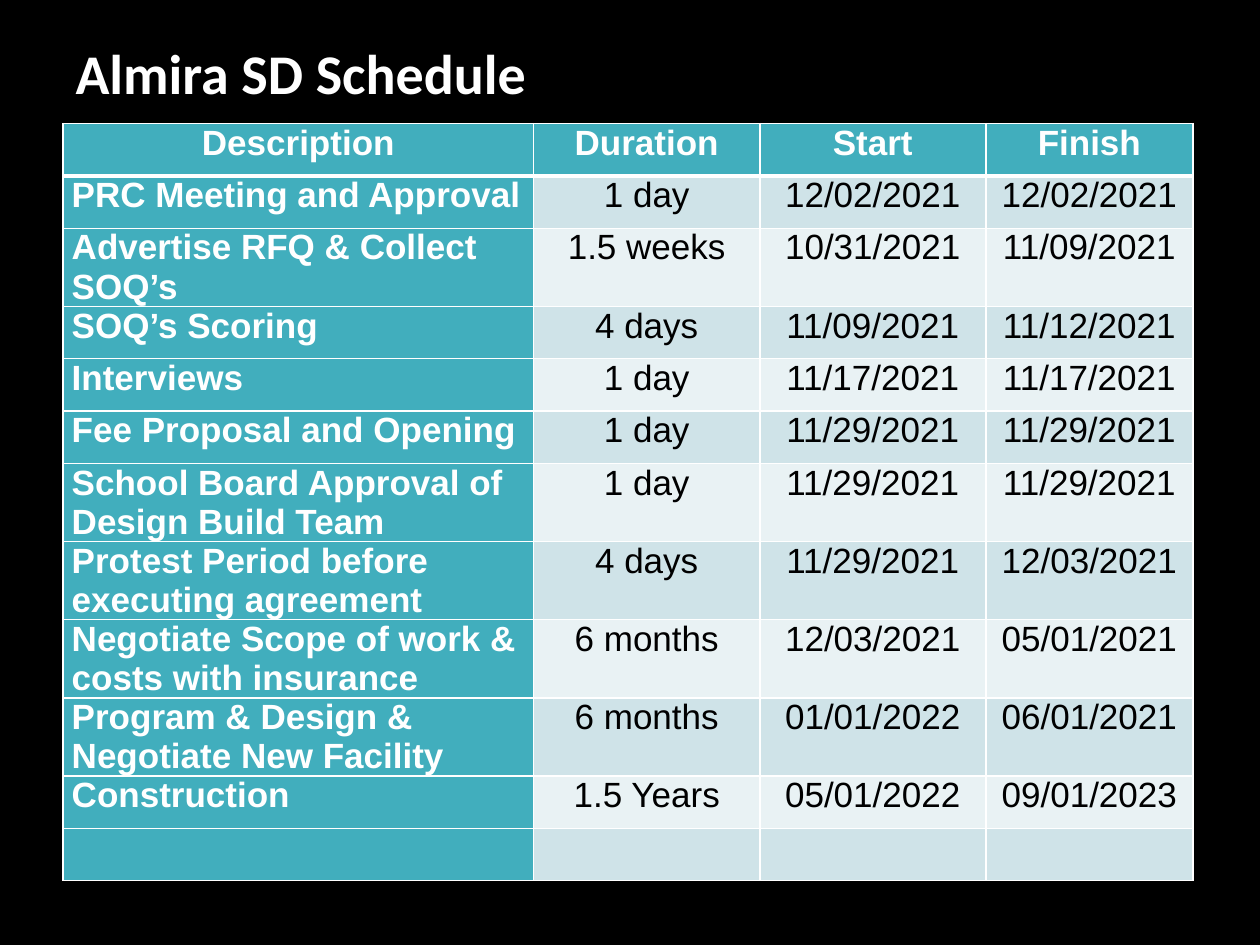
import pptx
import pptx.dml.color
import pptx.enum.text
import pptx.oxml
import pptx.oxml.ns
import pptx.util

Pt = pptx.util.Pt
ALIGN = pptx.enum.text.PP_ALIGN
ANCHOR = pptx.enum.text.MSO_ANCHOR

WHITE, BLACK, TEAL = "FFFFFF", "000000", "41AEBD"
BANDS = ["CFE3E8", "E9F2F4"]
COLUMN_WIDTHS = [269, 129.2, 129.2, 118.4]
SINGLE, DOUBLE = 29.9, 44.7
SCHEDULE = [
    (SINGLE, "Description", "Duration", "Start", "Finish"),
    (SINGLE, "PRC Meeting and Approval", "1 day", "12/02/2021", "12/02/2021"),
    (DOUBLE, "Advertise RFQ & Collect SOQ’s", "1.5 weeks", "10/31/2021", "11/09/2021"),
    (SINGLE, "SOQ’s Scoring", "4 days", "11/09/2021", "11/12/2021"),
    (SINGLE, "Interviews", "1 day", "11/17/2021", "11/17/2021"),
    (SINGLE, "Fee Proposal and Opening", "1 day", "11/29/2021", "11/29/2021"),
    (DOUBLE, "School Board Approval of Design Build Team", "1 day", "11/29/2021", "11/29/2021"),
    (DOUBLE, "Protest Period before executing agreement", "4 days", "11/29/2021", "12/03/2021"),
    (DOUBLE, "Negotiate Scope of work & costs with insurance", "6 months", "12/03/2021", "05/01/2021"),
    (DOUBLE, "Program & Design & Negotiate New Facility", "6 months", "01/01/2022", "06/01/2021"),
    (SINGLE, "Construction", "1.5 Years", "05/01/2022", "09/01/2023"),
    (SINGLE, "", "", "", ""),
]


def set_fill(fill, color):
    fill.solid()
    fill.fore_color.rgb = pptx.dml.color.RGBColor.from_string(color)


def set_font(font, color, **values):
    for name, value in values.items():
        setattr(font, name, value)
    set_fill(font.fill, color)


def set_borders(cell, color, **widths):
    """Give each named side (L, R, T, B) a solid line; call before filling the cell."""
    tc_pr = cell._tc.get_or_add_tcPr()
    for side, width in widths.items():
        tc_pr.append(pptx.oxml.parse_xml(
            f'<a:ln{side} {pptx.oxml.ns.nsdecls("a")} w="{Pt(width)}"><a:solidFill>'
            f'<a:srgbClr val="{color}"/></a:solidFill></a:ln{side}>'))


def add_title(s, text, left, top, width, height):
    sp = s.shapes.title
    sp.left, sp.top, sp.width, sp.height = map(Pt, (left, top, width, height))
    tf = sp.text_frame
    tf.text = text
    tf.vertical_anchor = ANCHOR.MIDDLE
    p = tf.paragraphs[0]
    p.alignment = ALIGN.LEFT
    p.line_spacing = 0.9
    set_font(p.runs[0].font, WHITE, name="Calibri", size=Pt(32), bold=True)


def format_cell(cell, text, row, col):
    header = row == 0
    heading = header or col == 0
    set_borders(cell, WHITE, L=1, R=1, T=3 if row == 1 else 1, B=3 if header else 1)
    set_fill(cell.fill, TEAL if heading else BANDS[(row - 1) % 2])
    cell.margin_left = cell.margin_right = Pt(5)
    cell.margin_top = cell.margin_bottom = 0
    if text:
        cell.text = text
        p = cell.text_frame.paragraphs[0]
        p.alignment = ALIGN.CENTER if header or col else ALIGN.LEFT
        set_font(p.runs[0].font, WHITE if heading else BLACK,
                 name="Arial", size=Pt(20), bold=heading)


def add_schedule(s, left, top):
    width, height = sum(COLUMN_WIDTHS), sum(row[0] for row in SCHEDULE)
    table = s.shapes.add_table(len(SCHEDULE), len(COLUMN_WIDTHS),
                               *map(Pt, (left, top, width, height))).table
    table.horz_banding = False
    table.first_col = True
    for column, column_width in zip(table.columns, COLUMN_WIDTHS):
        column.width = Pt(column_width)
    for row, (row_height, *texts) in enumerate(SCHEDULE):
        table.rows[row].height = Pt(row_height)
        for col, text in enumerate(texts):
            format_cell(table.cell(row, col), text, row, col)


def main():
    prs = pptx.Presentation()
    prs.slide_width, prs.slide_height = Pt(720), Pt(540)
    s = prs.slides.add_slide(prs.slide_layouts[5])
    set_fill(s.background.fill, BLACK)
    add_title(s, "Almira SD Schedule", 36, 12.25, 648, 62.65)
    add_schedule(s, 36, 70.7)
    prs.save("out.pptx")


if __name__ == "__main__":
    main()
